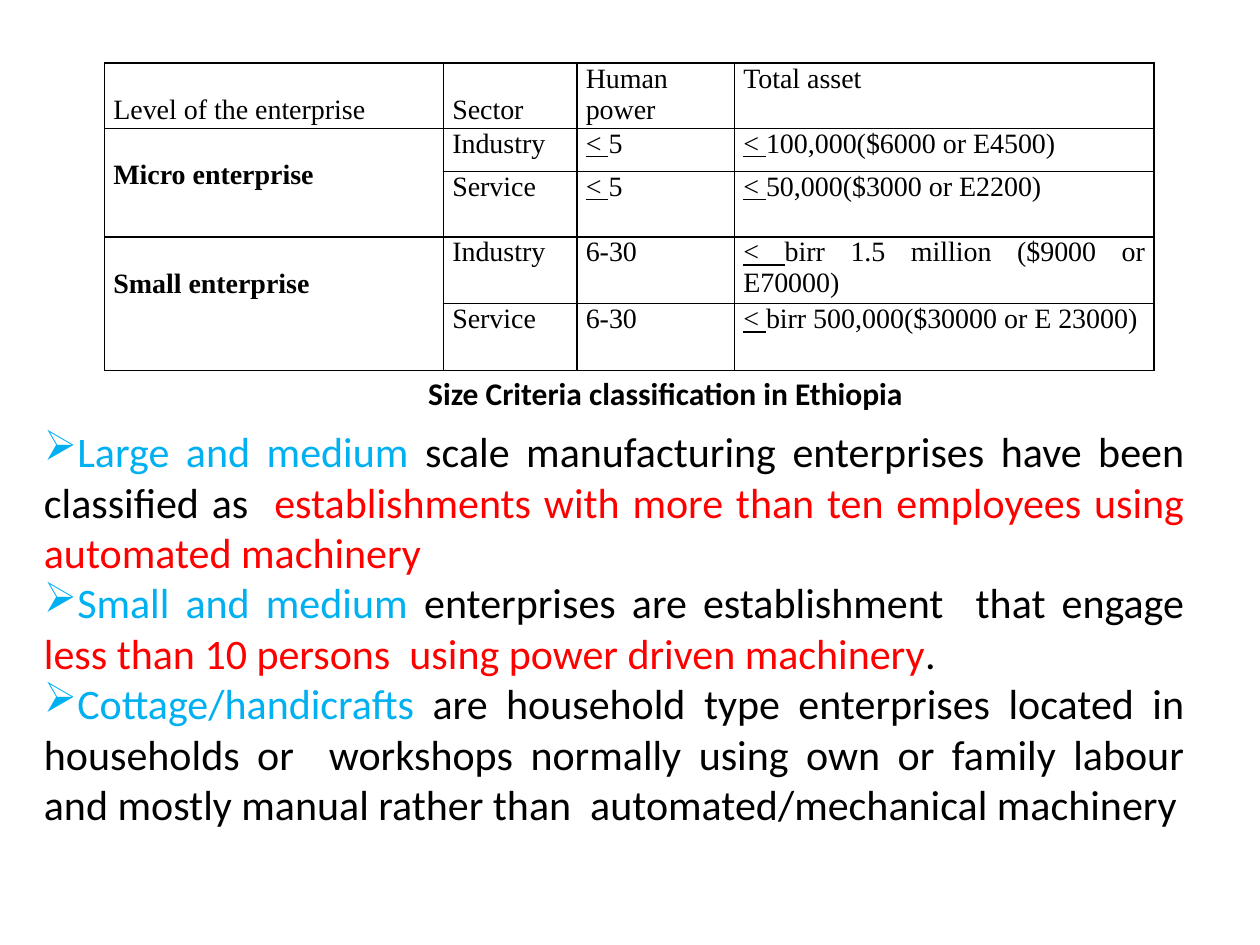
from lxml.etree import SubElement
from pptx import Presentation
from pptx.dml.color import RGBColor
from pptx.enum.text import MSO_AUTO_SIZE as AutoSize, PP_ALIGN as Align
from pptx.oxml import parse_xml
from pptx.oxml.ns import nsdecls, qn
from pptx.util import Inches, Pt

BLACK, RED, BLUE = "000000", "FF0000", "00B0F0"
COLS = [2.69, 1.06, 1.25, 3.33]
ROWS = [0.52, 0.34, 0.52, 0.53, 0.53]
LINE = 0.25
HEADER = ["Level of the enterprise", "Sector", "Human power", "Total asset"]
LEVELS = [
    ("Micro enterprise", [("Industry", "< 5", "< 100,000($6000 or E4500)"),
                          ("Service", "< 5", "< 50,000($3000 or E2200)")]),
    ("Small enterprise", [("Industry", "6-30", "< birr 1.5 million ($9000 or E70000)"),
                          ("Service", "6-30", "< birr 500,000($30000 or E 23000)")]),
]
POINTS = [
    [("Large and medium ", BLUE),
     ("scale manufacturing enterprises have been classified as  ", BLACK),
     ("establishments with more than ten employees using automated machinery", RED)],
    [("Small and medium ", BLUE),
     ("enterprises are establishment  that engage ", BLACK),
     ("less than 10 persons  using power driven machinery", RED),
     (".", BLACK)],
    [("Cottage/handicrafts", BLUE),
     (" are household type enterprises located in households or  workshops normally "
      "using own or family labour and mostly manual rather than  "
      "automated/mechanical machinery", BLACK)],
]


def rgb(value):
    return RGBColor.from_string(value)


def add_run(p, text, size, font="Calibri", color=BLACK, bold=False, underline=False):
    r = p.add_run()
    r.text = text
    r.font.size = Pt(size)
    r.font.name = font
    r.font.color.rgb = rgb(color)
    r.font.bold = bold
    r.font.underline = underline


def add_borders(cell):
    tcPr = cell._tc.get_or_add_tcPr()
    for i, side in enumerate("LRTB"):
        tcPr.insert(i, parse_xml(
            f'<a:ln{side} {nsdecls("a")} w="{Pt(1)}"><a:solidFill>'
            f'<a:srgbClr val="{BLACK}"/></a:solidFill></a:ln{side}>'))


def fill_cell(cell, text, lines_above=0, bold=False):
    cell.margin_left = cell.margin_right = Inches(0.07)
    cell.margin_top, cell.margin_bottom = Inches(lines_above * LINE), 0
    p = cell.text_frame.paragraphs[0]
    p.alignment = Align.JUSTIFY
    mark = "< "
    if text.startswith(mark):
        add_run(p, mark, 16, "Times New Roman", underline=True)
        text = text.removeprefix(mark)
    add_run(p, text, 16, "Times New Roman", bold=bold)


def add_size_table(s):
    table = s.shapes.add_table(len(ROWS), len(COLS), Inches(0.83), Inches(0.5),
                               Inches(sum(COLS)), Inches(sum(ROWS))).table
    table.first_row = table.horz_banding = False
    for col, width in zip(table.columns, COLS):
        col.width = Inches(width)
    for row, height in zip(table.rows, ROWS):
        row.height = Inches(height)
    for cell in table.iter_cells():
        cell.fill.background()
        add_borders(cell)
    for c, text in enumerate(HEADER):
        fill_cell(table.cell(0, c), text, lines_above=1 if c < 2 else 0)
    for i, (level, sectors) in enumerate(LEVELS):
        top = 1 + 2 * i
        table.cell(top, 0).merge(table.cell(top + 1, 0))
        fill_cell(table.cell(top, 0), level, lines_above=1, bold=True)
        for r, values in enumerate(sectors, top):
            for c, text in enumerate(values, 1):
                fill_cell(table.cell(r, c), text)


def add_text_box(s, left, top, width, height, wrap):
    tf = s.shapes.add_textbox(*map(Inches, (left, top, width, height))).text_frame
    tf.word_wrap = wrap
    tf.auto_size = AutoSize.SHAPE_TO_FIT_TEXT
    return tf


def add_caption(s):
    tf = add_text_box(s, 3.3, 2.92, 4.02, 0.4, False)
    add_run(tf.paragraphs[0], "Size Criteria classification in Ethiopia", 18, bold=True)


def add_points(s):
    tf = add_text_box(s, 0.25, 3.33, 9.25, 3.33, True)
    for i, runs in enumerate(POINTS):
        p = tf.add_paragraph() if i else tf.paragraphs[0]
        p.alignment = Align.JUSTIFY
        SubElement(p._p.get_or_add_pPr(), qn("a:buChar"), char="➢")
        for text, color in runs:
            add_run(p, text, 24, color=color)


def main():
    prs = Presentation()
    prs.slide_width, prs.slide_height = Inches(10), Inches(7.5)
    s = prs.slides.add_slide(prs.slide_layouts[6])
    add_size_table(s)
    add_caption(s)
    add_points(s)
    prs.save("out.pptx")


if __name__ == "__main__":
    main()
